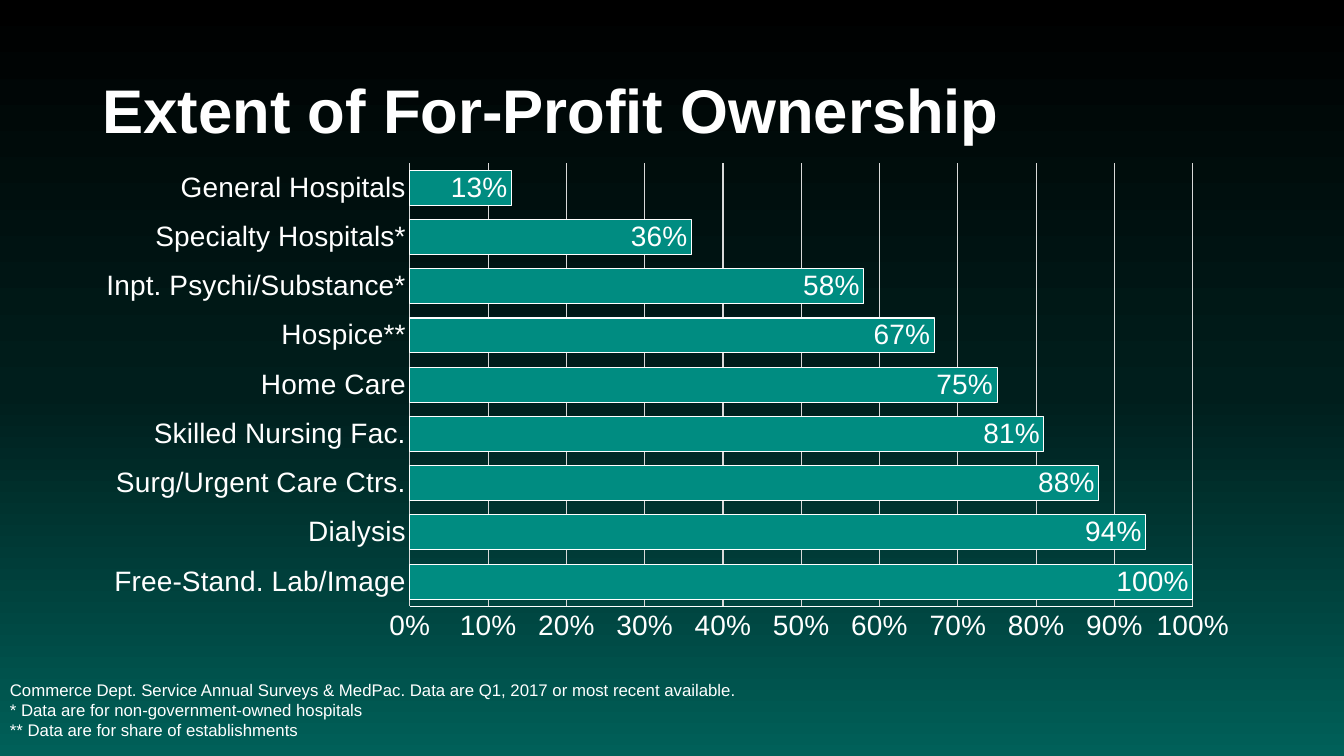
"""Build a slide with a bar chart of for-profit ownership in health care."""
from copy import deepcopy
from lxml.etree import SubElement
from pptx import Presentation
from pptx.chart.data import CategoryChartData
from pptx.dml.color import RGBColor
from pptx.enum.chart import XL_CHART_TYPE, XL_LABEL_POSITION, XL_TICK_MARK
from pptx.enum.text import MSO_ANCHOR
from pptx.oxml.ns import qn
from pptx.util import Inches, Pt

WHITE = RGBColor(0xFF, 0xFF, 0xFF)
GREY = RGBColor(0xD9, 0xD9, 0xD9)
TEAL = RGBColor(0x00, 0x8C, 0x81)
BLACK = RGBColor(0x00, 0x00, 0x00)
DARK = RGBColor(0x00, 0x1E, 0x1C)
GREEN = RGBColor(0x00, 0x60, 0x59)
FONT = "Arial"

deck = Presentation()
deck.slide_width, deck.slide_height = Inches(13.33), Inches(7.5)
slide = deck.slides.add_slide(deck.slide_layouts[6])


def style(font, size):
    font.name, font.size = FONT, Pt(size)
    font.color.rgb = WHITE


def write(box, lines, size, bold, space):
    frame = slide.shapes.add_textbox(*map(Inches, box)).text_frame
    frame.word_wrap = True
    frame.vertical_anchor = MSO_ANCHOR.MIDDLE
    for i, line in enumerate(lines):
        para = frame.add_paragraph() if i else frame.paragraphs[0]
        para.line_spacing = space
        run = para.add_run()
        run.text = line
        run.font.bold = bold
        style(run.font, size)


fill = slide.background.fill
fill.gradient()
fill.gradient_angle = 270
last = slide.element.findall(".//" + qn("a:gs"))[-1]
last.addnext(deepcopy(last))
for stop, place, tint in zip(fill.gradient_stops, (0, 0.52, 1), (BLACK, DARK, GREEN)):
    stop.position = place
    stop.color.rgb = tint

write((0.92, 0.4, 11.5, 1.45), ["Extent of For-Profit Ownership"], 44, True, 0.9)
write((0, 6.58, 9, 0.92), [
    "Commerce Dept. Service Annual Surveys & MedPac. Data are Q1, 2017 or most recent available.",
    "* Data are for non-government-owned hospitals",
    "** Data are for share of establishments",
], 12, False, 1.0)

shares = {
    "Free-Stand. Lab/Image": 1,
    "Dialysis": 0.94,
    "Surg/Urgent Care Ctrs.": 0.88,
    "Skilled Nursing Fac.": 0.81,
    "Home Care": 0.75,
    "Hospice**": 0.67,
    "Inpt. Psychi/Substance*": 0.58,
    "Specialty Hospitals*": 0.36,
    "General Hospitals": 0.13,
}
data = CategoryChartData(number_format="0%")
data.categories = list(shares)
data.add_series("Series 1", list(shares.values()))
area = map(Inches, (0.82, 1.52, 11.59, 4.94))
chart = slide.shapes.add_chart(XL_CHART_TYPE.BAR_CLUSTERED, *area, data).chart
chart.has_title = chart.has_legend = False
style(chart.font, 10)

cats, vals = chart.category_axis, chart.value_axis
for axis, tint in ((cats, GREY), (vals, WHITE)):
    axis.major_tick_mark = axis.minor_tick_mark = XL_TICK_MARK.NONE
    style(axis.tick_labels.font, 20)
    axis.format.line.color.rgb = tint
    axis.format.line.width = Pt(0.75)
cats.has_major_gridlines = False
vals.minimum_scale, vals.maximum_scale, vals.major_unit = 0, 1, 0.1
vals.tick_labels.number_format = "0%"
vals.tick_labels.number_format_is_linked = False
grid = vals.major_gridlines.format.line
grid.color.rgb, grid.width = GREY, Pt(0.75)

plot = chart.plots[0]
plot.gap_width = 41
plot.vary_by_categories = False
bars = plot.series[0]
bars.format.fill.solid()
bars.format.fill.fore_color.rgb = TEAL
bars.format.line.color.rgb = WHITE
bars.format.line.width = Pt(0.75)
tags = bars.data_labels
tags.show_value = True
tags.position = XL_LABEL_POSITION.INSIDE_END
tags.number_format, tags.number_format_is_linked = "0%", False
style(tags.font, 20)

region = chart.element.find(".//" + qn("c:plotArea"))
for old in region.findall(qn("c:layout")):
    region.remove(old)
layout = SubElement(region, qn("c:layout"))
region.insert(0, layout)
manual = SubElement(layout, qn("c:manualLayout"))
for key, value in (("layoutTarget", "inner"), ("xMode", "edge"), ("yMode", "edge"),
                   ("x", 0.28), ("y", 0.02), ("w", 0.67), ("h", 0.89)):
    SubElement(manual, qn("c:" + key)).set("val", str(value))

deck.save("out.pptx")
